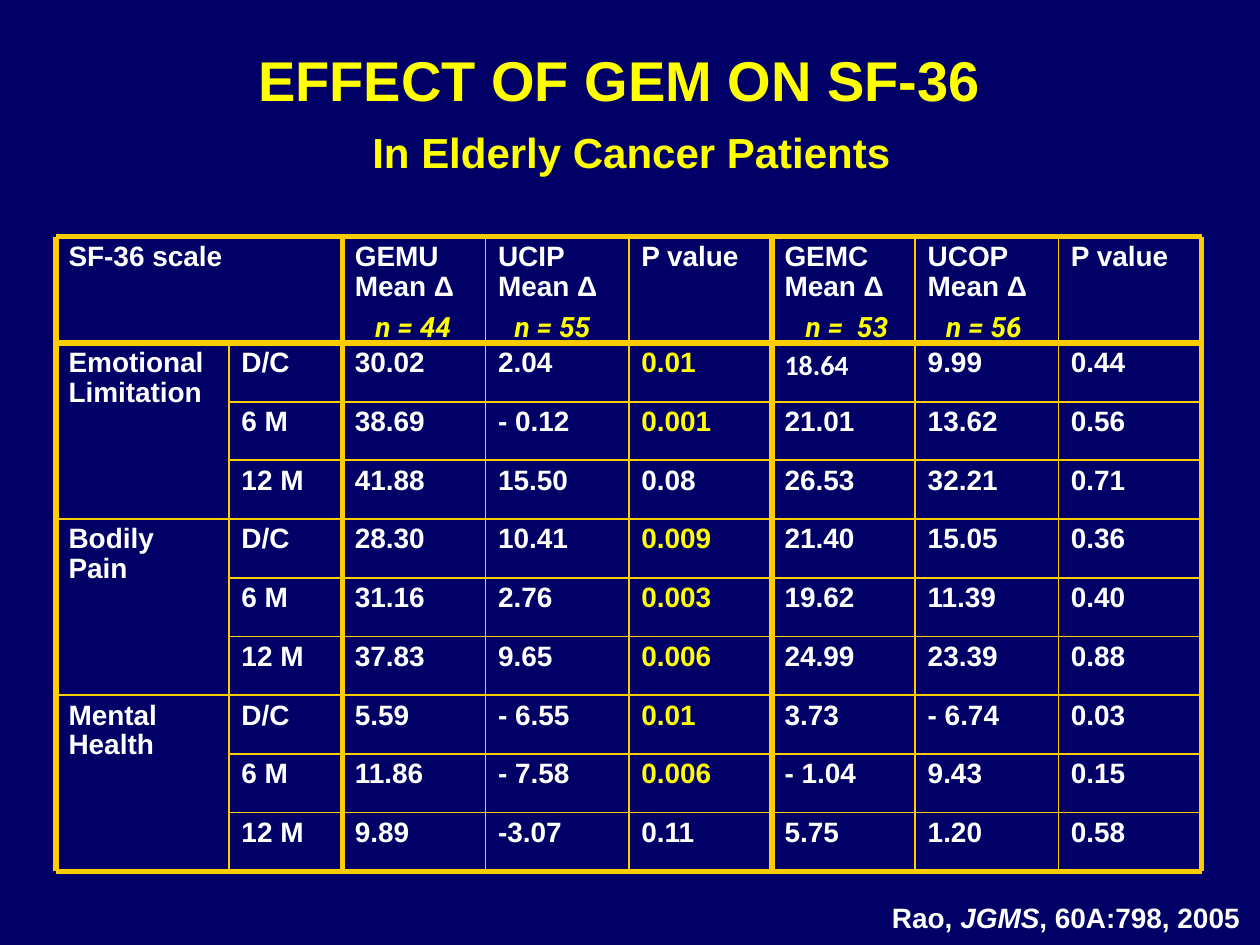
from itertools import accumulate

from lxml import etree
from pptx import Presentation
from pptx.dml.color import RGBColor
from pptx.enum import shapes, text
from pptx.oxml import ns
from pptx.util import Pt

NAVY = RGBColor(0x00, 0x00, 0x66)
YELLOW = RGBColor(0xFF, 0xFF, 0x00)
GOLD = RGBColor(0xFF, 0xCC, 0x00)
WHITE = RGBColor(0xFF, 0xFF, 0xFF)
NO_GRID_STYLE = "{2D5ABB26-0587-4C30-8999-92F81FD0307C}"


def write(tf, content, size=16, color=WHITE, font="Arial", italic=False,
          align=text.PP_ALIGN.LEFT, spacing=0.9):
    tf.word_wrap = True
    p = tf.paragraphs[0]
    p.alignment = align
    p.line_spacing = spacing
    p.space_before = Pt(0)
    r = p.add_run()
    r.text = content
    r.font.name = font
    r.font.size = Pt(size)
    r.font.bold = True
    r.font.italic = italic
    r.font.color.rgb = color


prs = Presentation()
prs.slide_width, prs.slide_height = Pt(720), Pt(540)
s = prs.slides.add_slide(prs.slide_layouts[6])
s.background.fill.solid()
s.background.fill.fore_color.rgb = NAVY

sp = s.shapes.add_textbox(Pt(30), Pt(25.2), Pt(648), Pt(40.3))
sp.text_frame.vertical_anchor = text.MSO_ANCHOR.MIDDLE
write(sp.text_frame, "EFFECT OF GEM ON SF-36", size=32, color=YELLOW,
      align=text.PP_ALIGN.CENTER, spacing=1.0)
sp = s.shapes.add_textbox(Pt(31.8), Pt(72), Pt(658), Pt(34))
write(sp.text_frame, "In Elderly Cancer Patients", size=24, color=YELLOW,
      align=text.PP_ALIGN.CENTER)

rows = [
    ["SF-36 scale", "", "GEMU Mean Δ", "UCIP Mean Δ", "P value",
     "GEMC Mean Δ", "UCOP Mean Δ", "P value"],
    ["Emotional Limitation", "D/C", "30.02", "2.04", "0.01", "18.64", "9.99", "0.44"],
    ["", "6 M", "38.69", "- 0.12", "0.001", "21.01", "13.62", "0.56"],
    ["", "12 M", "41.88", "15.50", "0.08", "26.53", "32.21", "0.71"],
    ["Bodily Pain", "D/C", "28.30", "10.41", "0.009", "21.40", "15.05", "0.36"],
    ["", "6 M", "31.16", "2.76", "0.003", "19.62", "11.39", "0.40"],
    ["", "12 M", "37.83", "9.65", "0.006", "24.99", "23.39", "0.88"],
    ["Mental Health", "D/C", "5.59", "- 6.55", "0.01", "3.73", "- 6.74", "0.03"],
    ["", "6 M", "11.86", "- 7.58", "0.006", "- 1.04", "9.43", "0.15"],
    ["", "12 M", "9.89", "-3.07", "0.11", "5.75", "1.20", "0.58"],
]
widths = [98.8, 64.8] + [81.84] * 6
heights = [60.8] + [33.54] * 9
xs = list(accumulate(widths, initial=32))
ys = list(accumulate(heights, initial=135.2))

tbl = s.shapes.add_table(10, 8, Pt(xs[0]), Pt(ys[0]), Pt(sum(widths)),
                         Pt(sum(heights))).table
tbl.first_row = tbl.horz_banding = False
tbl._tbl.tblPr.find(ns.qn("a:tableStyleId")).text = NO_GRID_STYLE
for col, width in zip(tbl.columns, widths):
    col.width = Pt(width)
for row, height in zip(tbl.rows, heights):
    row.height = Pt(height)
tbl.cell(0, 0).merge(tbl.cell(0, 1))
for i in (1, 4, 7):
    tbl.cell(i, 0).merge(tbl.cell(i + 2, 0))

for i, row in enumerate(rows):
    for j, value in enumerate(row):
        cell = tbl.cell(i, j)
        cell.fill.background()
        if value:
            significant = i > 0 and j == 4 and float(value) < 0.05
            write(cell.text_frame, value, color=YELLOW if significant else WHITE,
                  font="Calibri" if value == "18.64" else "Arial", spacing=0.95)

rules = []
for i, y in enumerate(ys):
    start = xs[0] if i in (0, 1, 4, 7, 10) else xs[1]
    rules.append((start, y, xs[-1], y, 3 if i in (0, 1, 10) else 1))
for j, x in enumerate(xs):
    start = ys[1] if j == 1 else ys[0]
    rules.append((x, start, x, ys[-1], 3 if j in (0, 2, 5, 8) else 1))
for x1, y1, x2, y2, weight in rules:
    ln = s.shapes.add_connector(shapes.MSO_CONNECTOR.STRAIGHT,
                                Pt(x1), Pt(y1), Pt(x2), Pt(y2))
    ln.line.color.rgb = GOLD
    ln.line.width = Pt(weight)
    etree.SubElement(ln._element.spPr, ns.qn("a:effectLst"))

for left, label in ((195.8, "n = 44"), (275.4, "n = 55"),
                    (441.7, "n =  53"), (522, "n = 56")):
    sp = s.shapes.add_textbox(Pt(left), Pt(175.7), Pt(82), Pt(25.2))
    sp.text_frame.margin_left = Pt(18.7)
    write(sp.text_frame, label, color=YELLOW, font="Roboto", italic=True)

sp = s.shapes.add_textbox(Pt(502.6), Pt(513.4), Pt(217.4), Pt(26.6))
for content, italic in (("Rao, ", False), ("JGMS", True), (", 60A:798, 2005", False)):
    write(sp.text_frame, content, italic=italic)

prs.save("out.pptx")
